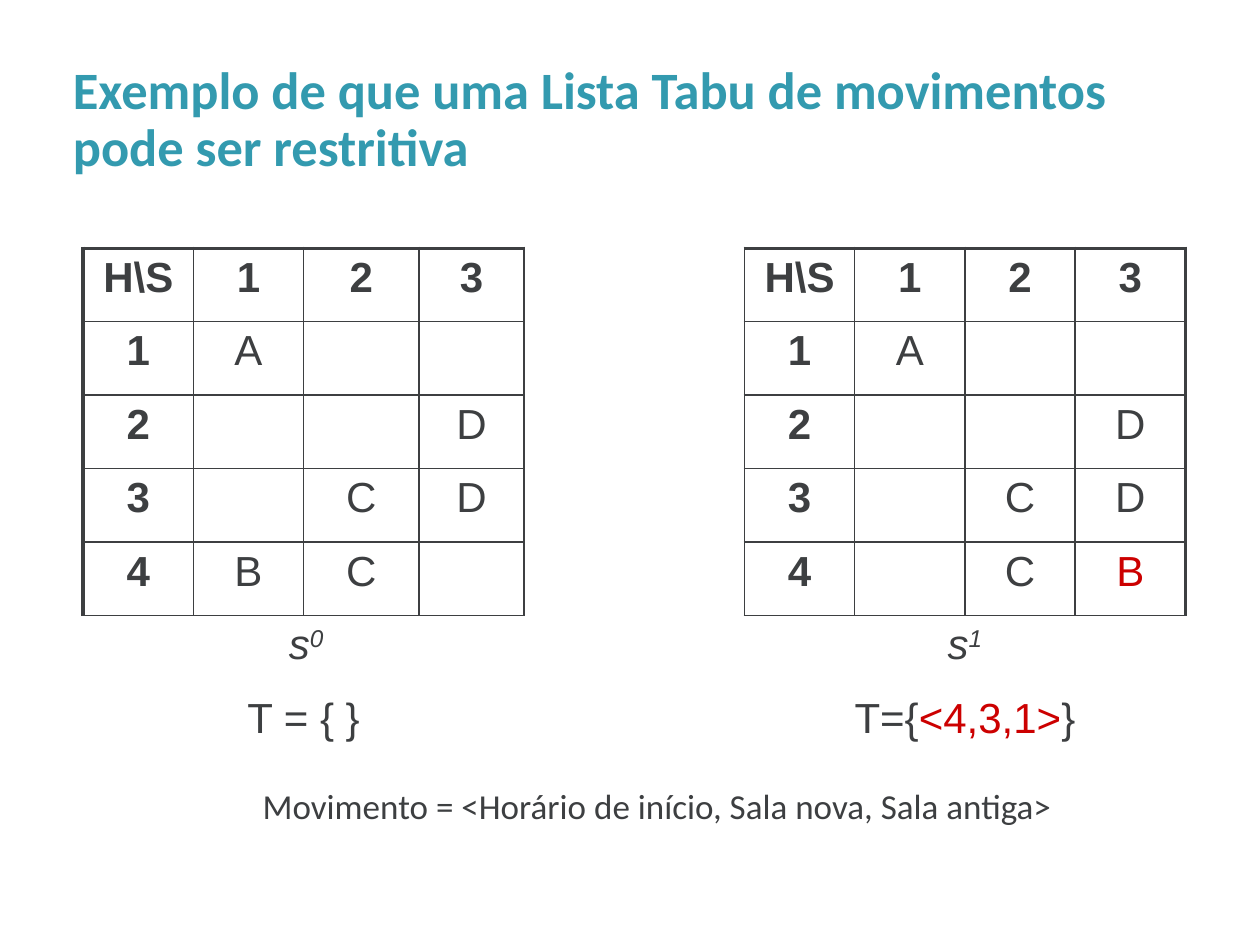
"""Build a slide showing two timetables and the tabu list of moves that links them."""
from lxml.etree import SubElement
from pptx import Presentation
from pptx.dml.color import RGBColor
from pptx.enum.text import MSO_ANCHOR, PP_ALIGN
from pptx.oxml.ns import qn
from pptx.util import Inches, Pt

INK = RGBColor(0x3D, 0x3F, 0x41)
RED = RGBColor(0xCC, 0x00, 0x00)
TEAL = RGBColor(0x33, 0x9A, 0xAF)

TITLE = "Exemplo de que uma Lista Tabu de movimentos pode ser restritiva"
LEGEND = "Movimento = <Horário de início, Sala nova, Sala antiga>"
HEADER = ["H\\S", "1", "2", "3"]
SCHEDULES = [
    {"column": 0, "state": "0", "tabu": [("T = { }", INK)], "moved": None, "edge": 1,
     "rows": [["1", "A", "", ""], ["2", "", "", "D"],
              ["3", "", "C", "D"], ["4", "B", "C", ""]]},
    {"column": 6, "state": "1", "moved": (4, 3), "edge": 2.25,
     "tabu": [("T={", INK), ("<4,3,1>", RED), ("}", INK)],
     "rows": [["1", "A", "", ""], ["2", "", "", "D"],
              ["3", "", "C", "D"], ["4", "", "C", "B"]]},
]

ROWS, COLS = 7, 10
LEFT, TOP, WIDTH, HEIGHT = 0.66, 1.97, 8.75, 4.08
COLUMN_SHIFT = {2: 0.04, 3: -0.04}
THIN, THICK = 1, 2.25
NO_STYLE = "{2D5ABB26-0587-4C30-8999-92F81FD0307C}"
CELL_FONT = {"name": "Arial", "size": Pt(24), "bold": False, "italic": False}


def add_run(p, text, color, **font):
    r = p.add_run()
    r.text = text
    for key, value in font.items():
        setattr(r.font, key, value)
    r.font.color.rgb = color
    return r


def add_text(s, box, text, color, align, anchor, spacing, **font):
    tf = s.shapes.add_textbox(*map(Inches, box)).text_frame
    tf.word_wrap = True
    tf.vertical_anchor = anchor
    p = tf.paragraphs[0]
    p.alignment, p.line_spacing = align, spacing
    add_run(p, text, color, **font)


def cell_run(cell, text, color=INK, **font):
    p = cell.text_frame.paragraphs[0]
    p.alignment = PP_ALIGN.CENTER
    return add_run(p, text, color, **{**CELL_FONT, **font})


def set_borders(cell, widths):
    tcPr = cell._tc.get_or_add_tcPr()
    for side, width in zip("LRTB", widths):
        ln = SubElement(tcPr, qn(f"a:ln{side}"), w=str(Pt(width)))
        fill = SubElement(ln, qn("a:solidFill"))
        SubElement(fill, qn("a:srgbClr"), val=str(INK))


def fill_schedule(table, schedule):
    first = schedule["column"]
    grid = [HEADER] + schedule["rows"]
    for i, row in enumerate(grid):
        for j, text in enumerate(row):
            cell = table.cell(i, first + j)
            set_borders(cell, (THICK if first + j == 0 else THIN,
                               schedule["edge"] if j == 3 else THIN,
                               THICK if i == 0 else THIN, THIN))
            if text:
                color = RED if (i, j) == schedule["moved"] else INK
                cell_run(cell, text, color, bold=i == 0 or j == 0)

    state = table.cell(len(grid), first + 1)
    state.merge(table.cell(len(grid), first + 2))
    cell_run(state, "s", italic=True)
    r = cell_run(state, schedule["state"], italic=True)
    r.font._element.set("baseline", "30000")

    tabu = table.cell(len(grid) + 1, first)
    tabu.merge(table.cell(len(grid) + 1, first + 3))
    for text, color in schedule["tabu"]:
        cell_run(tabu, text, color)


def add_schedules(s):
    box = map(Inches, (LEFT, TOP, WIDTH, HEIGHT))
    table = s.shapes.add_table(ROWS, COLS, *box).table
    table.first_row = table.horz_banding = False
    table._tbl.tblPr.find(qn("a:tableStyleId")).text = NO_STYLE
    for j, column in enumerate(table.columns):
        column.width = Inches(WIDTH / COLS + COLUMN_SHIFT.get(j, 0))
    for row in table.rows:
        row.height = Inches(HEIGHT / ROWS)
    for schedule in SCHEDULES:
        fill_schedule(table, schedule)
    for cell in table.iter_cells():
        cell.fill.background()


def main():
    prs = Presentation()
    prs.slide_width, prs.slide_height = Inches(10), Inches(7.5)
    s = prs.slides.add_slide(prs.slide_layouts[6])
    add_text(s, (0.48, 0.69, 9.05, 0.77), TITLE, TEAL, PP_ALIGN.LEFT,
             MSO_ANCHOR.BOTTOM, 0.9, name="Calibri", size=Pt(30), bold=True)
    add_schedules(s)
    add_text(s, (1.09, 6.18, 8.25, 0.43), LEGEND, INK, PP_ALIGN.CENTER,
             MSO_ANCHOR.TOP, 1.0, name="Calibri", size=Pt(20))
    prs.save("out.pptx")


if __name__ == "__main__":
    main()
